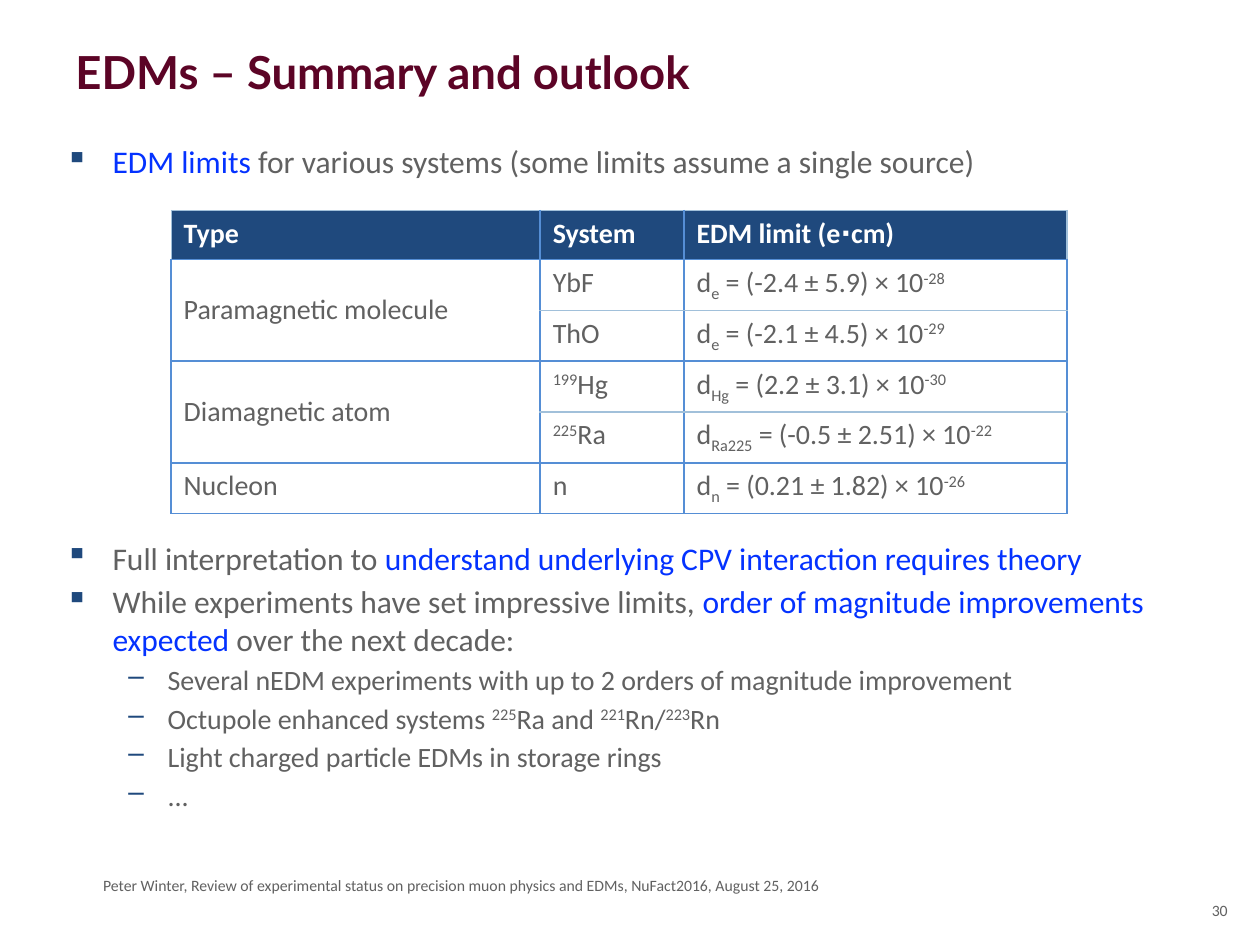
from lxml.etree import SubElement
from pptx import Presentation
from pptx.dml.color import RGBColor
from pptx.enum.text import MSO_ANCHOR, PP_ALIGN
from pptx.oxml.ns import qn
from pptx.util import Cm, Pt

MAROON = RGBColor(0x5C, 0x04, 0x26)
GREY = RGBColor(0x61, 0x61, 0x61)
BLUE = RGBColor(0x04, 0x32, 0xFF)
NAVY = RGBColor(0x1F, 0x49, 0x7D)
WHITE = RGBColor(0xFF, 0xFF, 0xFF)
RULE = RGBColor(0x55, 0x8E, 0xD5)
PALE = RGBColor(0xA1, 0xC0, 0xDA)
BASELINES = {"^": "30000", "_": "-25000"}


def write(para, marked, size, color=GREY, bold=False, face="Calibri"):
    para.font.name = face
    para.font.size = Pt(size)
    para.font.bold = bold
    para.font.color.rgb = color
    for part in marked.split("|"):
        mark = part[0]
        span = para.add_run()
        span.text = part[1:] if mark in "^_*" else part
        if mark in BASELINES:
            span._r.get_or_add_rPr().set("baseline", BASELINES[mark])
        elif mark == "*":
            span.font.color.rgb = BLUE


def add_box(left, top, width, height):
    box = page.shapes.add_textbox(Cm(left), Cm(top), Cm(width), Cm(height))
    box.text_frame.word_wrap = True
    return box.text_frame


deck = Presentation()
deck.slide_width, deck.slide_height = Cm(25.4), Cm(19.05)
page = deck.slides.add_slide(deck.slide_layouts[6])

title = add_box(1.27, 0.76, 22.86, 3.18)
write(title.paragraphs[0], "EDMs – Summary and outlook", 26, MAROON, True, "Lato")

bullets = [
    (0, 0, "*EDM limits |for various systems (some limits assume a single source)"),
    (0, 205, "Full interpretation to |*understand underlying CPV interaction requires theory"),
    (0, 3.2, "While experiments have set impressive limits, |"
             "*order of magnitude improvements expected| over the next decade:"),
    (1, 2.8, "Several nEDM experiments with up to 2 orders of magnitude improvement"),
    (1, 2.8, "Octupole enhanced systems |^225|Ra and |^221|Rn/|^223|Rn"),
    (1, 2.8, "Light charged particle EDMs in storage rings"),
    (1, 2.8, "..."),
]
levels = [("▪", 0.95, 0.95, 18), ("–", 2.06, 0.79, 16)]
body = add_box(1.07, 2.74, 22.86, 12.57)
for index, (level, gap, text) in enumerate(bullets):
    para = body.add_paragraph() if index else body.paragraphs[0]
    symbol, margin, hanging, size = levels[level]
    para.level = level
    props = para._p.get_or_add_pPr()
    props.set("marL", str(Cm(margin)))
    props.set("indent", str(-Cm(hanging)))
    SubElement(SubElement(props, qn("a:buClr")), qn("a:srgbClr"), val=str(NAVY))
    SubElement(props, qn("a:buChar"), char=symbol)
    para.space_before = Pt(gap)
    write(para, text, size)

footer = add_box(1.83, 17.53, 16.51, 0.64)
write(footer.paragraphs[0], "Peter Winter, Review of experimental status on precision muon "
      "physics and EDMs, NuFact2016, August 25, 2016", 9)
number = add_box(23.93, 18.03, 1.07, 1.02)
number.paragraphs[0].alignment = PP_ALIGN.RIGHT
write(number.paragraphs[0], "30", 9)

rows = [
    ("Type", "System", "EDM limit (e∙cm)"),
    ("Paramagnetic molecule", "YbF", "d|_e| = (-2.4 ± 5.9) × 10|^-28"),
    ("", "ThO", "d|_e| = (-2.1 ± 4.5) × 10|^-29"),
    ("Diamagnetic atom", "^199|Hg", "d|_Hg| = (2.2 ± 3.1) × 10|^-30"),
    ("", "^225|Ra", "d|_Ra225| = (-0.5 ± 2.51) × 10|^-22"),
    ("Nucleon", "n", "d|_n| = (0.21 ± 1.82) × 10|^-26"),
]
widths = [7.44, 2.9, 7.72]
table = page.shapes.add_table(len(rows), len(widths), Cm(3.45), Cm(4.24),
                              Cm(sum(widths)), Cm(5.94)).table
table.horz_banding = False
for column, width in zip(table.columns, widths):
    column.width = Cm(width)
for top in (1, 3):
    table.cell(top, 0).merge(table.cell(top + 1, 0))

for r, texts in enumerate(rows):
    table.rows[r].height = Cm(0.99)
    for c, text in enumerate(texts):
        cell = table.cell(r, c)
        header = r == 0
        if text:
            write(cell.text_frame.paragraphs[0], text, 16, WHITE if header else GREY, header)
        if c == 0 and r in (1, 3):
            cell.vertical_anchor = MSO_ANCHOR.MIDDLE
        pale_sides = set()
        if header:
            pale_sides = {"T"} | ({"L"} if c == 0 else set()) | ({"R"} if c == 2 else set())
        elif c > 0 and r in (1, 3):
            pale_sides = {"B"}
        elif c > 0 and r in (2, 4):
            pale_sides = {"T"}
        props = cell._tc.get_or_add_tcPr()
        for side in "LRTB":
            pale = side in pale_sides
            line = SubElement(props, qn("a:ln" + side), w=str(Pt(0.75 if pale else 1)))
            fill = SubElement(line, qn("a:solidFill"))
            SubElement(fill, qn("a:srgbClr"), val=str(PALE if pale else RULE))
        if header:
            cell.fill.solid()
            cell.fill.fore_color.rgb = NAVY
        else:
            cell.fill.background()

deck.save("out.pptx")
